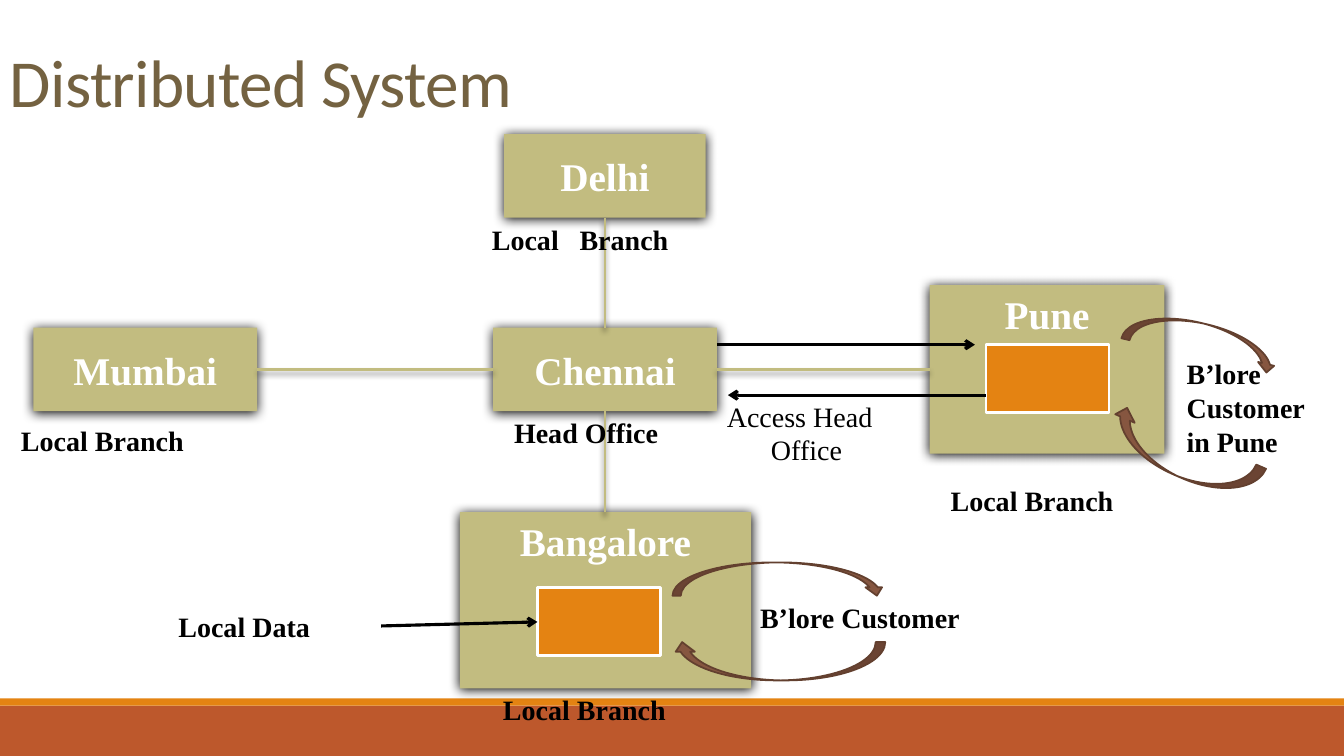
from lxml import etree
from pptx import Presentation
from pptx.dml.color import RGBColor
from pptx.enum import shapes, text
from pptx.oxml import ns
from pptx.util import Inches, Pt

COLORS = {
    "title": "746241", "office": "C2BC80", "data": "E48312", "footer": "BD582C",
    "cycle": "865640", "cycle edge": "63402F", "white": "FFFFFF", "black": "000000",
}
SERIF = "Times New Roman"
TOP, MIDDLE, BOTTOM = (text.MSO_ANCHOR.TOP, text.MSO_ANCHOR.MIDDLE,
                       text.MSO_ANCHOR.BOTTOM)
LEFT, CENTER = text.PP_ALIGN.LEFT, text.PP_ALIGN.CENTER
RECT, CURVE = (shapes.MSO_SHAPE.RECTANGLE, shapes.MSO_SHAPE.CURVED_DOWN_ARROW)

FOOTER = [((0, 7, 13.33, 0.5), "footer"), ((0, 6.93, 13.33, 0.07), "data")]
TITLE = ("Distributed System", (0, 0, 11.42, 1.25))
OFFICES = {
    "Delhi": ((5, 1.33, 2, 0.83), MIDDLE),
    "Pune": ((9.22, 2.83, 2.33, 1.67), TOP),
    "Mumbai": ((0.33, 3.25, 2.22, 0.83), MIDDLE),
    "Bangalore": ((4.56, 5.08, 2.89, 1.75), TOP),
    "Chennai": ((4.89, 3.25, 2.22, 0.83), MIDDLE),
}
HEAD_OFFICE = "Chennai"
LOCAL_DATA = [(5.33, 5.83), (9.78, 3.42)]
DATA_SIZE = (1.22, 0.67)
LABELS = [  # lines, box, bold
    (["Local Data"], (1.67, 5.92, 2.11, 0.58), True),
    (["Local Branch"], (0.11, 4.08, 2.33, 0.58), True),
    (["Local\tBranch"], (4.78, 2.08, 2.44, 0.58), True),
    (["Local Branch"], (4.89, 6.75, 2.33, 0.58), True),
    (["Access Head", "Office"], (7.11, 3.92, 1.78, 0.75), False),
    (["Head Office"], (5, 4, 2.33, 0.58), True),
    (["B’lore Customer"], (7.44, 5.83, 3, 0.58), True),
    (["B’lore", "Customer", "in Pune"], (11.67, 3.5, 1.28, 1.08), True),
    (["Local Branch"], (9.33, 4.67, 2.33, 0.58), True),
]
TAB_STOP = 0.87
CYCLES = [  # box, rotation
    ((6.67, 5.58, 2.11, 0.33), 0),
    ((6.67, 6.37, 2.11, 0.38), 180),
    ((11.14, 3.21, 1.56, 0.33), 13.3),
    ((10.93, 4.31, 1.61, 0.42), 203.7),
]
REQUESTS = [  # start, end with the arrowhead
    ((3.78, 6.21), (5.33, 6.17)),
    ((9.78, 3.92), (7.22, 3.92)),
    ((7.11, 3.42), (9.67, 3.42)),
]


def rgb(name):
    return RGBColor.from_string(COLORS[name])


def add_effects(shape, shadow=None):
    """Give the shape its own effect list; shadow is (opacity %, blur, distance)."""
    properties = shape._element.spPr
    effects = etree.SubElement(properties, ns.qn("a:effectLst"))
    if shadow:
        opacity, blur, distance = shadow
        outer = etree.SubElement(effects, ns.qn("a:outerShdw"), blurRad=str(Pt(blur)),
                                 dist=str(Pt(distance)), dir="5400000", rotWithShape="0")
        black = etree.SubElement(outer, ns.qn("a:srgbClr"), val=COLORS["black"])
        etree.SubElement(black, ns.qn("a:alpha"), val=str(opacity * 1000))


def add_block(slide, kind, box, fill, edge=None, width=2, shadow=None):
    block = slide.shapes.add_shape(kind, *map(Inches, box))
    block.fill.solid()
    block.fill.fore_color.rgb = rgb(fill)
    if edge:
        block.line.color.rgb = rgb(edge)
        block.line.width = Pt(width)
    else:
        block.line.fill.background()
    add_effects(block, shadow)
    return block


def write(shape, lines, size, color, bold=True, font=SERIF, anchor=MIDDLE, aligns=(LEFT,)):
    """Fill a shape with lines; the last alignment serves all remaining lines."""
    frame = shape.text_frame
    frame.word_wrap = True
    frame.vertical_anchor = anchor
    for i, line in enumerate(lines):
        paragraph = frame.add_paragraph() if i else frame.paragraphs[0]
        paragraph.alignment = aligns[min(i, len(aligns) - 1)]
        if "\t" in line:
            tabs = etree.SubElement(paragraph._p.get_or_add_pPr(), ns.qn("a:tabLst"))
            etree.SubElement(tabs, ns.qn("a:tab"), pos=str(Inches(TAB_STOP)), algn="l")
        run = paragraph.add_run()
        run.text = line
        run.font.name, run.font.size, run.font.bold = font, Pt(size), bold
        run.font.color.rgb = rgb(color)
    return frame


def add_line(slide, start, end, color, width, shadow=None, arrow=False):
    line = slide.shapes.add_connector(shapes.MSO_CONNECTOR.STRAIGHT,
                                      *map(Inches, (*start, *end)))
    line.line.color.rgb = rgb(color)
    line.line.width = Pt(width)
    if arrow:
        etree.SubElement(line.line._get_or_add_ln(), ns.qn("a:tailEnd"), type="arrow")
    add_effects(line, shadow)


def add_title(slide):
    title, box = TITLE
    frame = write(slide.shapes.add_textbox(*map(Inches, box)), [title], 48, "title",
                  bold=False, font="Calibri", anchor=BOTTOM)
    paragraph = frame.paragraphs[0]
    paragraph.line_spacing = 0.85
    paragraph.runs[0].font._element.set("spc", "-50")


def add_links(slide):
    """Join the head office to the facing edge of every branch."""
    x, y, w, h = OFFICES[HEAD_OFFICE][0]
    middle_x, middle_y = x + w / 2, y + h / 2
    for name, ((bx, by, bw, bh), _) in OFFICES.items():
        if name == HEAD_OFFICE:
            continue
        if by + bh < y:
            ends = (middle_x, by + bh), (middle_x, y)
        elif by > y + h:
            ends = (middle_x, y + h), (middle_x, by)
        elif bx < x:
            ends = (bx + bw, middle_y), (x, middle_y)
        else:
            ends = (x + w, middle_y), (bx, middle_y)
        add_line(slide, *ends, "office", 2, shadow=(40, 4, 3))


def main():
    deck = Presentation()
    deck.slide_width, deck.slide_height = Inches(13.33), Inches(7.5)
    slide = deck.slides.add_slide(deck.slide_layouts[6])

    for box, color in FOOTER:
        add_block(slide, RECT, box, color)
    add_title(slide)
    for city, (box, anchor) in OFFICES.items():
        office = add_block(slide, RECT, box, "office", shadow=(100, 8.5, 1))
        write(office, [city], 28, "white", anchor=anchor, aligns=(CENTER,))
    add_links(slide)
    for corner in LOCAL_DATA:
        add_block(slide, RECT, (*corner, *DATA_SIZE), "data", "white")
    for box, rotation in CYCLES:
        add_block(slide, CURVE, box, "cycle", "cycle edge", 1.25).rotation = rotation
    for lines, box, bold in LABELS:
        label = slide.shapes.add_textbox(*map(Inches, box))
        aligns = (LEFT,) if bold else (LEFT, CENTER)
        write(label, lines, 20, "black", bold, aligns=aligns).margin_right = (
            Inches(0) if len(lines) > 2 else Inches(0.1))
    for start, end in REQUESTS:
        add_line(slide, start, end, "black", 2.25, arrow=True)

    deck.save("out.pptx")


if __name__ == "__main__":
    main()
